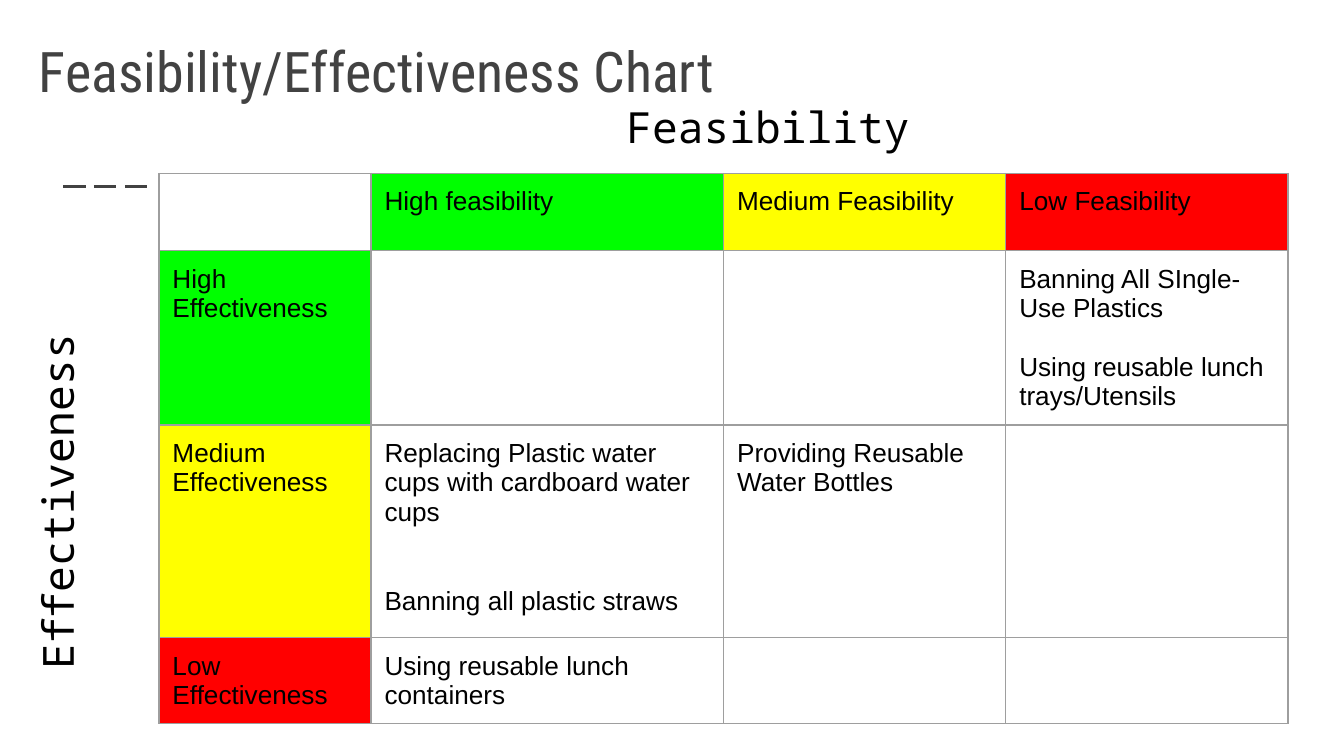
from dataclasses import dataclass

from lxml import etree
from pptx import Presentation
from pptx import util as u
from pptx.dml.color import RGBColor
from pptx.enum import dml, shapes, text
from pptx.oxml import parse_xml
from pptx.oxml.ns import qn

Pt = u.Pt

BLACK = RGBColor(0x00, 0x00, 0x00)
GREY = RGBColor(0x42, 0x42, 0x42)
BORDER = RGBColor(0x9E, 0x9E, 0x9E)
GREEN = RGBColor(0x00, 0xFF, 0x00)
YELLOW = RGBColor(0xFF, 0xFF, 0x00)
RED = RGBColor(0xFF, 0x00, 0x00)

LEVEL_COLORS = (GREEN, YELLOW, RED)
MARGINS = dict.fromkeys(
    ("margin_left", "margin_top", "margin_right", "margin_bottom"), Pt(7.2))
CELL_LINE = 16  # height of one line of cell text


@dataclass
class Label:
    words: str
    left: float
    top: float
    width: float
    height: float
    font: str
    size: float
    color: RGBColor = BLACK
    align: text.PP_ALIGN = text.PP_ALIGN.LEFT
    anchor: text.MSO_ANCHOR = text.MSO_ANCHOR.TOP
    rotation: float = 0


@dataclass
class Entry:
    row: int
    column: int
    ideas: tuple[str, ...]
    gap_lines: int = 0
    fill: RGBColor | None = None


LABELS = (
    Label("Feasibility/Effectiveness Chart", 13.7, 5, 671, 57.6,
          "Roboto Condensed", 30, GREY, anchor=text.MSO_ANCHOR.BOTTOM),
    Label("Feasibility", 187, 46.8, 449.3, 46, "Noto Sans Mono", 23,
          align=text.PP_ALIGN.CENTER),
    Label("Effectiveness", -95, 212.4, 257.8, 49, "Noto Sans Mono", 23,
          rotation=270),
)

COLUMN_WIDTHS = (113.6, 188.9, 151.2, 151.2)
ROW_HEIGHTS = (41.5, 93, 114, 45.5)
COLUMN_HEADS = ("High feasibility", "Medium Feasibility", "Low Feasibility")
ROW_HEADS = ("High Effectiveness", "Medium Effectiveness", "Low Effectiveness")
IDEAS = (
    Entry(1, 3, ("Banning All SIngle- Use Plastics",
                 "Using reusable lunch trays/Utensils"), gap_lines=1),
    Entry(2, 1, ("Replacing Plastic water cups with cardboard water cups",
                 "Banning all plastic straws"), gap_lines=2),
    Entry(2, 2, ("Providing Reusable Water Bottles",)),
    Entry(3, 1, ("Using reusable lunch containers",)),
)


def set_all(target, values: dict) -> None:
    for name, value in values.items():
        setattr(target, name, value)


def write(para, words: str, font: str, size: float, color: RGBColor) -> None:
    span = para.add_run()
    span.text = words
    set_all(span.font, {"name": font, "size": Pt(size)})
    span.font.color.rgb = color


def add_label(page, label: Label) -> None:
    box = page.shapes.add_textbox(
        Pt(label.left), Pt(label.top), Pt(label.width), Pt(label.height))
    box.rotation = label.rotation
    set_all(box.text_frame, {
        **MARGINS, "word_wrap": True, "vertical_anchor": label.anchor})
    para = box.text_frame.paragraphs[0]
    para.alignment = label.align
    write(para, label.words, label.font, label.size, label.color)


def add_borders(cell) -> None:
    properties = cell._tc.get_or_add_tcPr()
    for side in ("lnL", "lnR", "lnT", "lnB"):
        properties.append(parse_xml(
            f'<a:{side} w="{Pt(0.75)}" '
            'xmlns:a="http://schemas.openxmlformats.org/drawingml/2006/main">'
            f'<a:solidFill><a:srgbClr val="{BORDER}"/></a:solidFill>'
            f'</a:{side}>'))


def fill_cell(grid, entry: Entry) -> None:
    cell = grid.cell(entry.row, entry.column)
    if entry.fill is not None:
        cell.fill.solid()
        cell.fill.fore_color.rgb = entry.fill
    for index, idea in enumerate(entry.ideas):
        frame = cell.text_frame
        para = frame.add_paragraph() if index else frame.paragraphs[0]
        if index:
            para.space_before = Pt(entry.gap_lines * CELL_LINE)
        write(para, idea, "Arial", 14, BLACK)


def add_matrix(page, entries: list[Entry]) -> None:
    grid = page.shapes.add_table(
        len(ROW_HEIGHTS), len(COLUMN_WIDTHS), Pt(85.2), Pt(92.9),
        Pt(sum(COLUMN_WIDTHS)), Pt(sum(ROW_HEIGHTS))).table
    set_all(grid, {"first_row": False, "horz_banding": False})
    for column, width in zip(grid.columns, COLUMN_WIDTHS):
        column.width = Pt(width)
    for row, height in zip(grid.rows, ROW_HEIGHTS):
        row.height = Pt(height)
    for cell in grid.iter_cells():
        set_all(cell, MARGINS)
        add_borders(cell)
        cell.fill.background()
    for entry in entries:
        fill_cell(grid, entry)


def add_dash(page) -> None:
    dash = page.shapes.add_connector(
        shapes.MSO_CONNECTOR.STRAIGHT, Pt(33.8), Pt(100), Pt(82), Pt(100))
    dash.line.color.rgb = GREY
    set_all(dash.line, {
        "width": Pt(1.5), "dash_style": dml.MSO_LINE.LONG_DASH})
    etree.SubElement(dash._element.spPr, qn("a:effectLst"))


def main() -> None:
    deck = Presentation()
    set_all(deck, {"slide_width": Pt(720), "slide_height": Pt(405)})
    page = deck.slides.add_slide(deck.slide_layouts[6])

    # Dashed accent below the title
    add_dash(page)

    # Matrix: coloured heads along both axes, then the ideas
    heads = []
    for level, color in enumerate(LEVEL_COLORS):
        heads.append(Entry(0, level + 1, (COLUMN_HEADS[level],), fill=color))
        heads.append(Entry(level + 1, 0, (ROW_HEADS[level],), fill=color))
    add_matrix(page, [*heads, *IDEAS])

    # Title and axis names
    for label in LABELS:
        add_label(page, label)

    deck.save("out.pptx")


if __name__ == "__main__":
    main()
